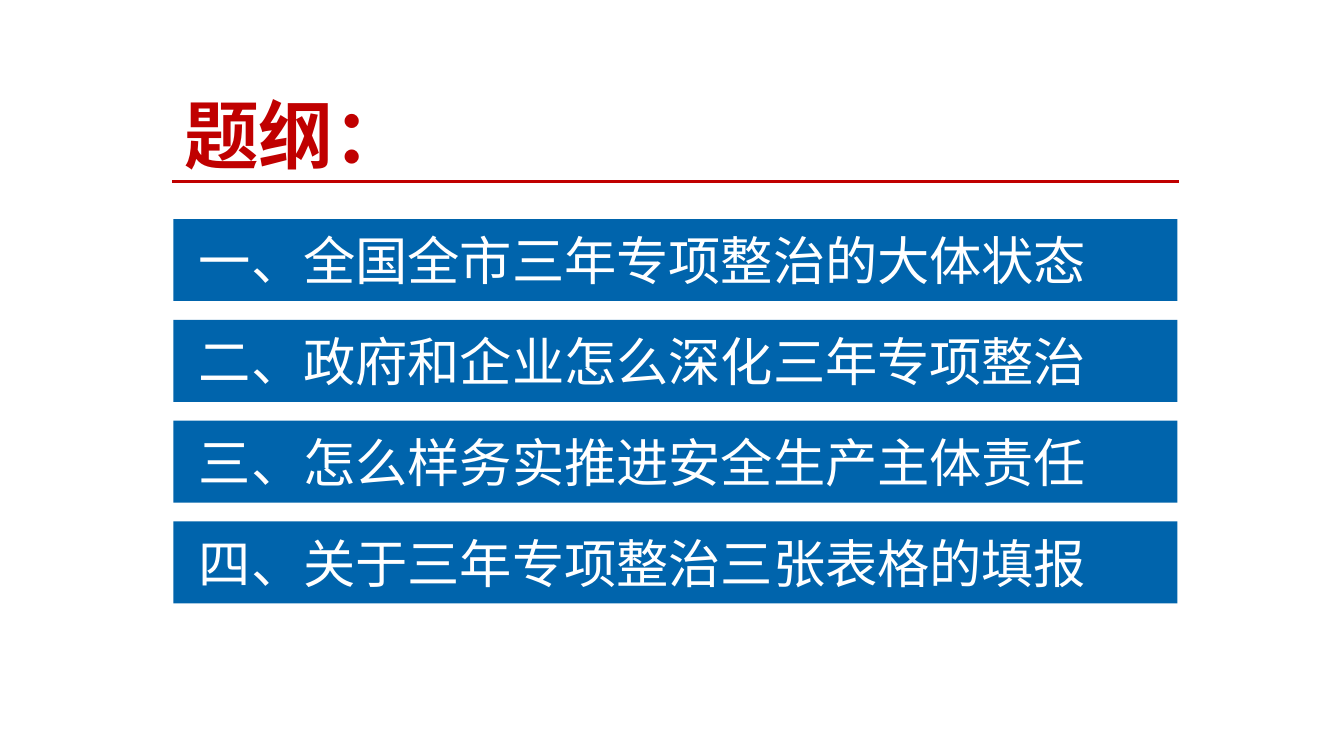
from pptx import Presentation
from pptx.dml.color import RGBColor
from pptx.enum.shapes import MSO_CONNECTOR, MSO_SHAPE
from pptx.enum.text import MSO_ANCHOR, MSO_AUTO_SIZE, PP_ALIGN
from pptx.oxml.ns import qn
from pptx.util import Inches, Pt
from lxml.etree import SubElement

FONT = "Noto Sans CJK SC"
RED, BLUE, WHITE = "C00000", "0064AC", "FFFFFF"
LEFT, BAR_WIDTH, BAR_HEIGHT = 1.29, 7.47, 0.61
FIRST_TOP, BAR_PITCH = 1.63, 0.75
TOPICS = [
    "一、全国全市三年专项整治的大体状态",
    "二、政府和企业怎么深化三年专项整治",
    "三、怎么样务实推进安全生产主体责任",
    "四、关于三年专项整治三张表格的填报",
]


def color(value):
    """Return the colour for a hex string."""
    return RGBColor.from_string(value)


def add_text(frame, text, size, value, bold=False):
    """Add one left-aligned run to the first paragraph of a frame."""
    para = frame.paragraphs[0]
    para.alignment = PP_ALIGN.LEFT
    para.space_before = Pt(0)
    span = para.add_run()
    span.text = text
    font = span.font
    font.name, font.size, font.bold = FONT, Pt(size), bold
    font.color.rgb = color(value)
    SubElement(font._element, qn("a:ea"), typeface=FONT)


def add_title(page, text):
    """Place and fill the title placeholder."""
    box = page.shapes.title
    box.left, box.top = Inches(1.3), Inches(0.62)
    box.width, box.height = Inches(4.89), Inches(0.86)
    frame = box.text_frame
    frame.word_wrap = True
    frame.auto_size = MSO_AUTO_SIZE.NONE
    frame.vertical_anchor = MSO_ANCHOR.TOP
    frame.margin_left = frame.margin_right = Inches(0.07)
    frame.margin_top = frame.margin_bottom = Inches(0.04)
    add_text(frame, text, 40, RED, True)


def add_rule(page, top):
    """Draw the line under the title."""
    rule = page.shapes.add_connector(
        MSO_CONNECTOR.STRAIGHT, Inches(1.28), Inches(top), Inches(8.77), Inches(top))
    rule.line.color.rgb = color(RED)
    rule.line.width = Pt(1.5)
    SubElement(rule._element.spPr, qn("a:effectLst"))


def add_bar(page, top, text):
    """Draw one topic bar with its text."""
    bar = page.shapes.add_shape(
        MSO_SHAPE.RECTANGLE, Inches(LEFT), Inches(top), Inches(BAR_WIDTH), Inches(BAR_HEIGHT))
    bar.shadow.inherit = False
    bar.fill.solid()
    bar.fill.fore_color.rgb = color(BLUE)
    bar.line.fill.background()
    frame = bar.text_frame
    frame.word_wrap = True
    frame.vertical_anchor = MSO_ANCHOR.MIDDLE
    frame.margin_left = Inches(0.19)
    add_text(frame, text, 28, WHITE)


def main():
    """Build and save the outline slide."""
    deck = Presentation()
    deck.slide_width = Inches(10)
    deck.slide_height = deck.slide_width * 9 // 16
    page = deck.slides.add_slide(deck.slide_layouts[5])
    add_title(page, "题纲：")
    add_rule(page, 1.35)
    for index, topic in enumerate(TOPICS):
        add_bar(page, FIRST_TOP + index * BAR_PITCH, topic)
    deck.save("out.pptx")


if __name__ == "__main__":
    main()
